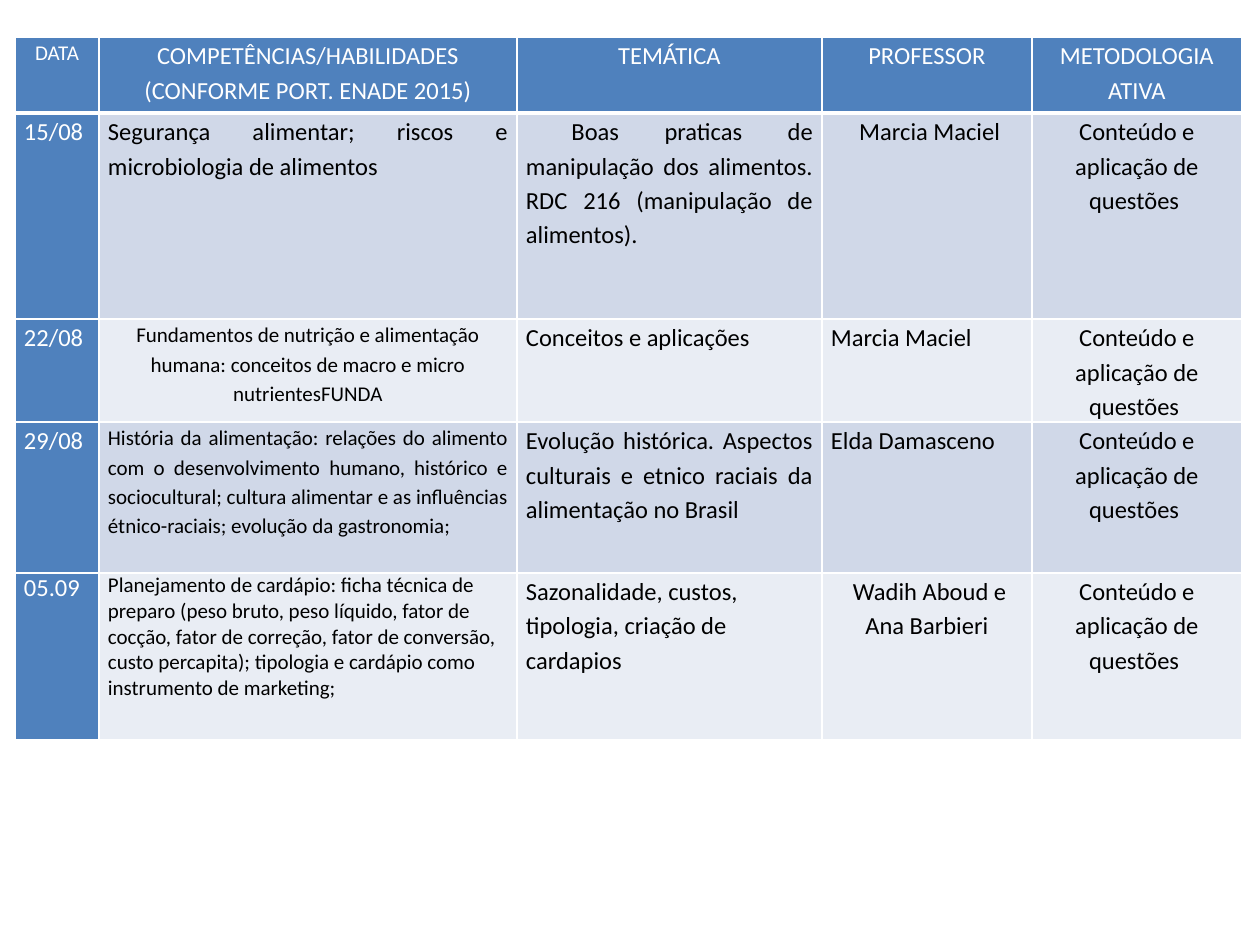
"""Builds a one-slide course schedule table."""
from dataclasses import dataclass

from lxml import etree
from pptx import Presentation
from pptx.dml.color import RGBColor
from pptx.oxml.ns import qn
from pptx.util import Emu, Pt
from pptx.enum import text

PX = 914400 / 126
WHITE, BLACK, BLUE = "FFFFFF", "000000", "4F81BD"
BANDS = ("D0D8E8", "E9EDF4")
LEFT, CENTER, JUSTIFY = text.PP_ALIGN.LEFT, text.PP_ALIGN.CENTER, text.PP_ALIGN.JUSTIFY
COLUMN_WIDTHS = (84, 418, 305, 210, 210)
ROW_HEIGHTS = (76, 206, 103, 151, 167)


@dataclass(frozen=True)
class Entry:
    """Wording and paragraph format of one table cell."""
    wording: str
    align: text.PP_ALIGN = CENTER
    size: int = 14
    spacing: float = 1.15


METHOD = Entry("Conteúdo e aplicação de questões ")
SCHEDULE = (
    (
        Entry("DATA", size=12),
        Entry("COMPETÊNCIAS/HABILIDADES\n(CONFORME PORT. ENADE 2015)"),
        Entry("TEMÁTICA"),
        Entry("PROFESSOR"),
        Entry("METODOLOGIA ATIVA"),
    ),
    (
        Entry("15/08", LEFT),
        Entry("Segurança alimentar; riscos e microbiologia de alimentos", JUSTIFY),
        Entry(" Boas praticas de manipulação dos alimentos. "
              "RDC 216 (manipulação de alimentos).", JUSTIFY),
        Entry(" Marcia Maciel"),
        METHOD,
    ),
    (
        Entry("22/08", LEFT),
        Entry("Fundamentos de nutrição e alimentação humana: "
              "conceitos de macro e micro nutrientesFUNDA", size=12),
        Entry("Conceitos e aplicações", JUSTIFY),
        Entry("Marcia Maciel", JUSTIFY),
        METHOD,
    ),
    (
        Entry("29/08", LEFT),
        Entry("História da alimentação: relações do alimento com o desenvolvimento "
              "humano, histórico e sociocultural; cultura alimentar e as influências "
              "étnico-raciais; evolução da gastronomia; ", JUSTIFY, 12),
        Entry("Evolução histórica. Aspectos culturais e etnico raciais da "
              "alimentação no Brasil", JUSTIFY),
        Entry("Elda Damasceno", JUSTIFY),
        METHOD,
    ),
    (
        Entry("05.09", LEFT, spacing=1.0),
        Entry("Planejamento de cardápio: ficha técnica de preparo (peso bruto, peso "
              "líquido, fator de cocção, fator de correção, fator de conversão, custo "
              "percapita); tipologia e cardápio como instrumento de marketing;",
              LEFT, 12, 1.0),
        Entry("Sazonalidade, custos, tipologia, criação de cardapios", LEFT),
        Entry(" Wadih Aboud e Ana Barbieri"),
        METHOD,
    ),
)


def px(length: int) -> Emu:
    """Turn whole pixels into EMU."""
    return Emu(round(length * PX))


def color(value: str) -> RGBColor:
    """Turn a hex string into a colour."""
    return RGBColor.from_string(value)


def add_borders(cell, bottom: int) -> None:
    """Give a cell white borders, one point wide except at the bottom."""
    properties = cell._tc.get_or_add_tcPr()
    for tag, width in (("a:lnL", 1), ("a:lnR", 1), ("a:lnT", 1), ("a:lnB", bottom)):
        line = etree.SubElement(properties, qn(tag), w=str(Pt(width)))
        fill = etree.SubElement(line, qn("a:solidFill"))
        etree.SubElement(fill, qn("a:srgbClr"), val=WHITE)


def write_cell(cell, entry: Entry, fill: str, ink: str, bottom: int) -> None:
    """Write, format and fill one cell."""
    add_borders(cell, bottom)
    cell.fill.solid()
    cell.fill.fore_color.rgb = color(fill)
    cell.margin_left = cell.margin_right = px(9)
    cell.margin_top = cell.margin_bottom = 0
    cell.text = entry.wording
    for para in cell.text_frame.paragraphs:
        para.alignment = entry.align
        para.line_spacing = entry.spacing
        para.font.name = "Calibri"
        para.font.size = Pt(entry.size)
        para.font.bold = False
        para.font.color.rgb = color(ink)


def add_schedule(page) -> None:
    """Draw the whole schedule table."""
    frame = page.shapes.add_table(
        len(ROW_HEIGHTS), len(COLUMN_WIDTHS), px(15), px(37),
        px(sum(COLUMN_WIDTHS)), px(sum(ROW_HEIGHTS)))
    table = frame.table
    table.first_row = table.horz_banding = False
    for column, width in zip(table.columns, COLUMN_WIDTHS):
        column.width = px(width)
    for r, (row, height, entries) in enumerate(zip(table.rows, ROW_HEIGHTS, SCHEDULE)):
        row.height = px(height)
        for c, (cell, entry) in enumerate(zip(row.cells, entries)):
            heading = r == 0 or c == 0
            fill = BLUE if heading else BANDS[(r - 1) % 2]
            write_cell(cell, entry, fill, WHITE if heading else BLACK, 3 if r == 0 else 1)


def main() -> None:
    """Build and save the deck."""
    deck = Presentation()
    deck.slide_width, deck.slide_height = px(1260), px(945)
    page = deck.slides.add_slide(deck.slide_layouts[6])
    add_schedule(page)
    deck.save("out.pptx")


if __name__ == "__main__":
    main()
